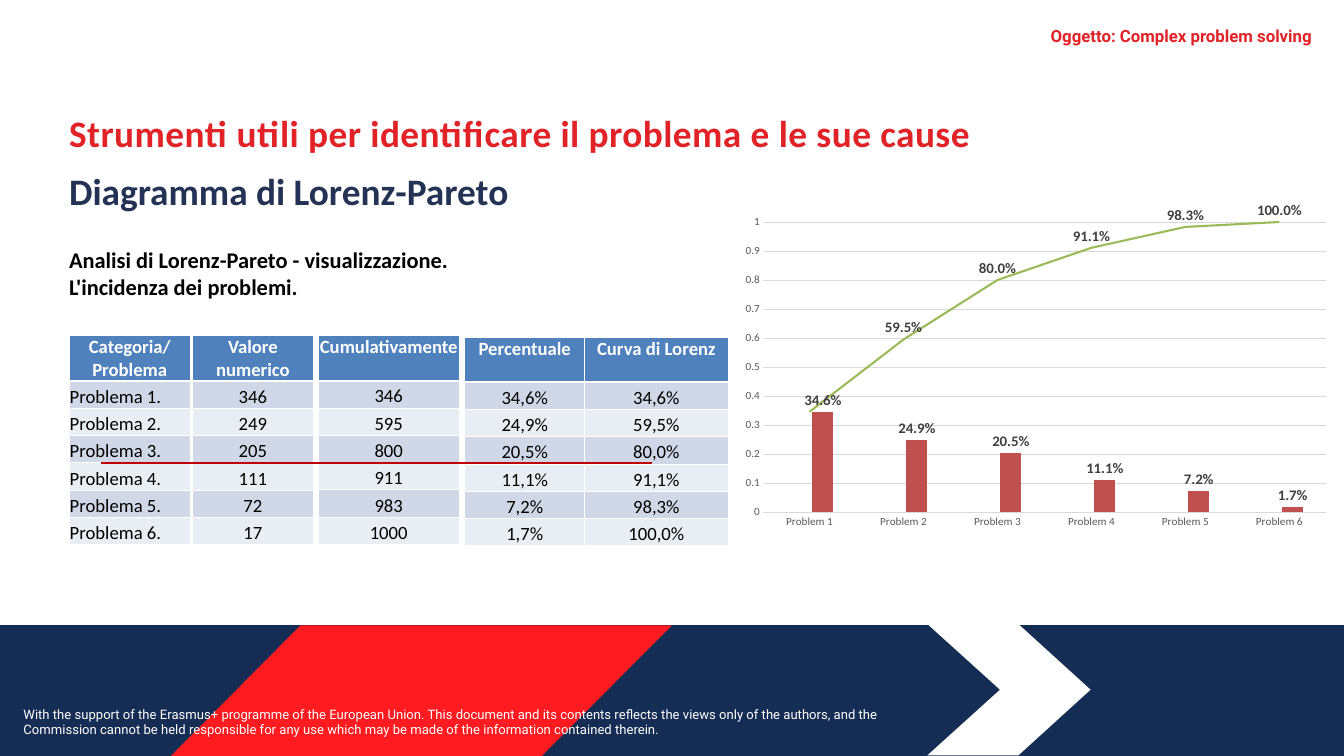
from dataclasses import dataclass

from pptx import Presentation
from pptx.chart.data import CategoryChartData
from pptx.dml.color import RGBColor
from pptx.enum.chart import XL_CHART_TYPE as Chart, XL_LABEL_POSITION as LabelPos
from pptx.enum.chart import XL_MARKER_STYLE as Marker, XL_TICK_MARK as Tick
from pptx.enum.shapes import MSO_CONNECTOR as Connector
from pptx.enum.text import MSO_ANCHOR as Anchor, PP_ALIGN as Align
from pptx.oxml import parse_xml
from pptx.oxml.ns import nsdecls, qn
from pptx.util import Pt


@dataclass(frozen=True)
class Theme:
    navy: str = "152D54"
    red: str = "FF1B20"
    title: str = "E12227"
    subtitle: str = "243255"
    white: str = "FFFFFF"
    black: str = "000000"
    head: str = "4F81BD"
    bands: tuple = ("D0D8E8", "E9EDF4")
    rule: str = "C00000"
    bar: str = "C0504D"
    curve: str = "9BBB59"
    axis: str = "595959"
    grid: str = "D9D9D9"
    label: str = "404040"
    font: str = "Calibri"
    brand_font: str = "Roboto"
    title_size: int = 40
    lead_size: int = 24
    table_size: int = 20
    topic_size: int = 18
    label_size: int = 16
    footer_size: int = 14
    axis_size: int = 12


T = Theme()
WIDTH, HEIGHT = 1440, 810

TOPIC = "Oggetto: Complex problem solving"
TITLE = "Strumenti utili per identificare il problema e le sue cause"
SUBTITLE = "Diagramma di Lorenz-Pareto"
LEAD = ["Analisi di Lorenz-Pareto - visualizzazione.", "L'incidenza dei problemi."]
FOOTER = ("With the support of the Erasmus+ programme of the European Union. This document and its "
          "contents reflects the views only of the authors, and the Commission cannot be held "
          "responsible for any use which may be made of the information contained therein.")

# (left, top, width, heading, values): each column is a table of its own
COLUMNS = [
    (74, 359.5, 130, "Categoria/ Problema", [f"Problema {n}." for n in range(1, 7)]),
    (206, 359.5, 130, "Valore numerico", ["346", "249", "205", "111", "72", "17"]),
    (341, 359.5, 151, "Cumulativamente", ["346", "595", "800", "911", "983", "1000"]),
    (497.5, 361, 129.5, "Percentuale", ["34,6%", "24,9%", "20,5%", "11,1%", "7,2%", "1,7%"]),
    (626.5, 361, 153.5, "Curva di Lorenz",
     ["34,6%", "59,5%", "80,0%", "91,1%", "98,3%", "100,0%"]),
]
HEAD_HEIGHT, ROW_HEIGHT = 48.5, 29.25

PROBLEMS = [f"Problem {n}" for n in range(1, 7)]
SERIES = [
    ("Series 1", [None] * 6),
    ("Series 2", [0.346, 0.249, 0.205, 0.111, 0.072, 0.017]),
    ("Series 3", [0.346, 0.595, 0.8, 0.911, 0.983, 1]),
]

BAND_TOP = 670
BAND_SHAPES = [
    (T.navy, [(0, BAND_TOP), (WIDTH, BAND_TOP), (WIDTH, HEIGHT), (0, HEIGHT)]),
    (T.white, [(993.5, 668.5), (1091, 668.5), (1168.5, 739), (1091, 809.5), (993.5, 809.5),
               (1071.5, 739)]),
    (T.red, [(322, BAND_TOP), (720, BAND_TOP), (580.5, HEIGHT), (183, HEIGHT)]),
]


def rgb(color):
    return RGBColor.from_string(color)


def style_font(font, size, color, bold=False, name=T.font):
    font.name, font.size, font.bold = name, Pt(size), bold
    font.color.rgb = rgb(color)


def write(frame, text, align=Align.LEFT, before=0, after=0, spacing=None, **font):
    """Add one paragraph, using the frame's first one while it is still empty."""
    first = frame.paragraphs[0]
    paragraph = frame.add_paragraph() if first.runs else first
    paragraph.alignment = align
    paragraph.space_before, paragraph.space_after = Pt(before), Pt(after)
    run = paragraph.add_run()
    run.text = text
    style_font(run.font, **font)
    if spacing:
        run.font._element.set("spc", str(round(spacing * 100)))


def add_frame(slide, left, top, width, height, insets):
    frame = slide.shapes.add_textbox(Pt(left), Pt(top), Pt(width), Pt(height)).text_frame
    frame.word_wrap = True
    set_insets(frame, *insets)
    return frame


def set_insets(target, left, top, right, bottom):
    target.margin_left, target.margin_top = Pt(left), Pt(top)
    target.margin_right, target.margin_bottom = Pt(right), Pt(bottom)


def add_polygon(slide, color, points):
    corners = [(Pt(x), Pt(y)) for x, y in points]
    builder = slide.shapes.build_freeform(*corners[0])
    builder.add_line_segments(corners[1:], close=True)
    shape = builder.convert_to_shape()
    shape.shadow.inherit = False
    shape.fill.solid()
    shape.fill.fore_color.rgb = rgb(color)
    shape.line.fill.background()


def paint_cell(cell, color, bottom_width):
    """Give the cell white borders and then its fill, in schema order."""
    properties = cell._tc.get_or_add_tcPr()
    for side, width in (("L", 1), ("R", 1), ("T", 1), ("B", bottom_width)):
        properties.append(parse_xml(
            f'<a:ln{side} {nsdecls("a")} w="{int(Pt(width))}"><a:solidFill>'
            f'<a:srgbClr val="{T.white}"/></a:solidFill></a:ln{side}>'))
    cell.fill.solid()
    cell.fill.fore_color.rgb = rgb(color)


def add_column(slide, left, top, width, heading, values):
    height = HEAD_HEIGHT + ROW_HEIGHT * len(values)
    table = slide.shapes.add_table(len(values) + 1, 1, Pt(left), Pt(top), Pt(width),
                                   Pt(height)).table
    table.horz_banding = False
    for index, text in enumerate([heading, *values]):
        is_head = index == 0
        table.rows[index].height = Pt(HEAD_HEIGHT if is_head else ROW_HEIGHT)
        cell = table.cell(index, 0)
        set_insets(cell, 0.7, 0.7, 0.7, 0)
        cell.vertical_anchor = Anchor.TOP if is_head else Anchor.BOTTOM
        paint_cell(cell, T.head if is_head else T.bands[(index - 1) % 2], 3 if is_head else 1)
        write(cell.text_frame, text, size=T.table_size, bold=is_head,
              color=T.white if is_head else T.black,
              align=Align.LEFT if text.startswith("Problema") else Align.CENTER)


def move_last_series_to_line(chart):
    bars = chart.plots[0]._element
    line_plot = parse_xml(f'<c:lineChart {nsdecls("c")}><c:grouping val="standard"/>'
                          '<c:varyColors val="0"/><c:marker val="1"/></c:lineChart>')
    curve = bars.findall(qn("c:ser"))[-1]
    for bar_only in curve.findall(qn("c:invertIfNegative")):
        curve.remove(bar_only)
    line_plot.insert(2, curve)
    for axis in bars.findall(qn("c:axId")):
        line_plot.append(parse_xml(f'<c:axId {nsdecls("c")} val="{axis.get("val")}"/>'))
    bars.addnext(line_plot)


def label_series(series, position):
    labels = series.data_labels
    labels.show_value = True
    labels.number_format, labels.number_format_is_linked = "0.0%", False
    labels.position = position
    style_font(labels.font, T.label_size, T.label, bold=True)
    return labels


def add_pareto_chart(slide):
    data = CategoryChartData()
    data.categories = PROBLEMS
    for name, values in SERIES:
        data.add_series(name, values)
    chart = slide.shapes.add_chart(Chart.COLUMN_CLUSTERED, Pt(786), Pt(216), Pt(648), Pt(356.5),
                                   data).chart
    chart.has_legend = chart.has_title = False
    style_font(chart.font, 10, T.black)
    move_last_series_to_line(chart)

    bars, line_plot = chart.plots
    bars.gap_width, bars.overlap, bars.vary_by_categories = 219, -27, False
    for series, color in zip(bars.series, (T.head, T.bar)):
        series.format.fill.solid()
        series.format.fill.fore_color.rgb = rgb(color)
    label_series(bars.series[1], LabelPos.OUTSIDE_END)

    curve = line_plot.series[0]
    curve.smooth = False
    curve.marker.style = Marker.NONE
    curve.format.line.color.rgb, curve.format.line.width = rgb(T.curve), Pt(2.25)
    # The first bar already carries this value
    label_series(curve, LabelPos.ABOVE)._element.insert(0, parse_xml(
        f'<c:dLbl {nsdecls("c")}><c:idx val="0"/><c:delete val="1"/></c:dLbl>'))

    problems, shares = chart.category_axis, chart.value_axis
    for axis in (problems, shares):
        axis.major_tick_mark = axis.minor_tick_mark = Tick.NONE
        style_font(axis.tick_labels.font, T.axis_size, T.axis)
    shares.minimum_scale, shares.maximum_scale, shares.major_unit = 0, 1, 0.1
    shares.has_major_gridlines = True
    shares.format.line.fill.background()
    for line in (problems.format.line, shares.major_gridlines.format.line):
        line.color.rgb, line.width = rgb(T.grid), Pt(0.75)


def main():
    deck = Presentation()
    deck.slide_width, deck.slide_height = Pt(WIDTH), Pt(HEIGHT)
    slide = deck.slides.add_slide(deck.slide_layouts[6])
    for color, points in BAND_SHAPES:
        add_polygon(slide, color, points)

    heading = add_frame(slide, 74, 116.5, 1306, 234.5, (0, 1.4, 0, 0))
    write(heading, TITLE, size=T.title_size, color=T.title, bold=True, before=1.1, spacing=0.5)
    write(heading, SUBTITLE, size=T.title_size, color=T.subtitle, bold=True, before=14.4, after=6)
    for text, gap in zip(LEAD, (29.3, 0)):
        write(heading, text, size=T.lead_size, color=T.black, bold=True, before=gap)
    write(add_frame(slide, 18, 753, 990, 41, (7.2, 3.6, 7.2, 3.6)), FOOTER,
          size=T.footer_size, color=T.white, name=T.brand_font)
    write(add_frame(slide, 648, 26.5, 757.5, 23, (0, 0.9, 0, 0)), TOPIC, align=Align.RIGHT,
          size=T.topic_size, color=T.title, bold=True, name=T.brand_font)

    for column in COLUMNS:
        add_column(slide, *column)
    cutoff = slide.shapes.add_connector(Connector.STRAIGHT, Pt(108.5), Pt(496), Pt(698.5), Pt(496))
    cutoff.line.color.rgb, cutoff.line.width = rgb(T.rule), Pt(2.25)
    cutoff._element.spPr.append(parse_xml(f'<a:effectLst {nsdecls("a")}/>'))
    add_pareto_chart(slide)
    deck.save("out.pptx")


if __name__ == "__main__":
    main()
